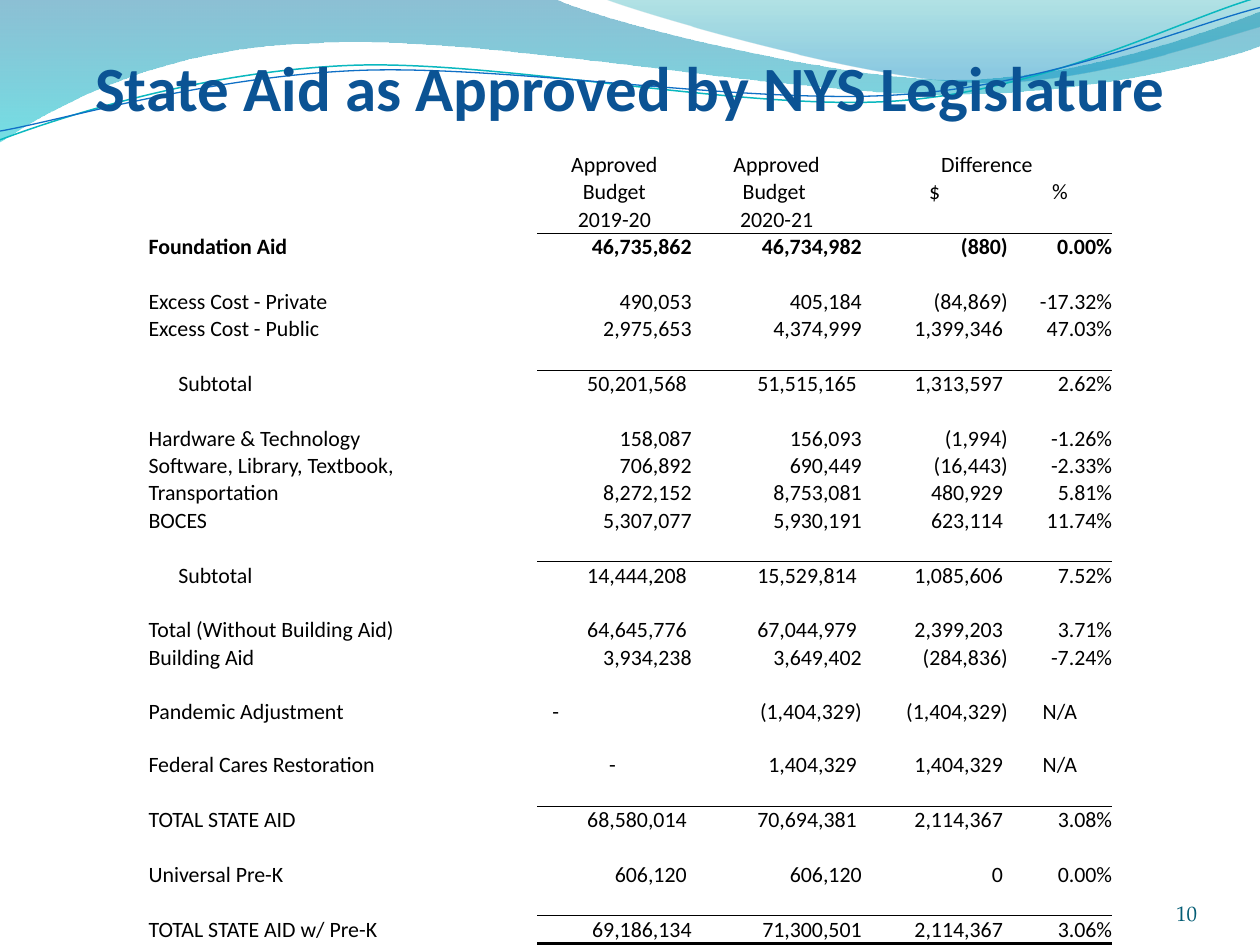
import math
from dataclasses import dataclass

import pptx
import pptx.dml.color
import pptx.enum.text
import pptx.oxml
import pptx.oxml.ns
import pptx.util

Pt = pptx.util.Pt
ALIGN = pptx.enum.text.PP_ALIGN
BOTTOM = pptx.enum.text.MSO_ANCHOR.BOTTOM
qn = pptx.oxml.ns.qn
DRAWING = "http://schemas.openxmlformats.org/drawingml/2006/main"
NO_STYLE = "{2D5ABB26-0587-4C30-8999-92F81FD0307C}"


@dataclass(frozen=True)
class Theme:
    body_font: str = "Calibri"
    number_font: str = "TeX Gyre Pagella"
    title_size: float = 36
    body_size: float = 12.5
    number_size: float = 12
    title: str = "0B5394"
    number: str = "045D75"
    ink: str = "000000"
    teal_line: str = "0AB8BF"
    blue_line: str = "0F6FC6"
    thin_rule: float = 0.5
    thick_rule: float = 2


THEME = Theme()


@dataclass(frozen=True)
class Stop:
    position: float
    color: str
    opacity: int


@dataclass(frozen=True)
class Wave:
    """Each segment holds two numbers for a line, six for a Bezier curve."""
    start: tuple
    segments: tuple
    stops: tuple = ()
    line: str = ""
    weight: float = 0
    tilt: float = 0
    center: tuple = (0, 0)


@dataclass(frozen=True)
class Row:
    cells: tuple = ("",) * 5
    height: float = 15.65
    header: bool = False
    bold: bool = False
    ruled: bool = False  # thin rule above the figures
    indent: float = 0
    dash_inset: float = 0  # right inset of a centred dash


WAVES = (
    Wave((0, 0),
         ((316.8, -0.7),
          (342.7, 12.2, 478.1, 45.4, 545.8, 45.4),
          (614.2, 45.4, 689.8, 18.7, 720, 6.5),
          (720.7, 25.9),
          (707.8, 31.7, 626.4, 54.7, 537.1, 54),
          (447.8, 54, 275, 20.2, 185, 24.5),
          (92.9, 25.9, 33.1, 59.8, -0.7, 81.4)),
         stops=(Stop(0, "0074A1", 45), Stop(1, "00C6CF", 55))),
    Wave((344.9, -0.7),
         ((366.5, 7.9, 491, 44.6, 553.7, 46.8),
          (616.3, 49.7, 691.9, 23, 720, 15.1),
          (720, 0)),
         stops=(Stop(0, "00A1A9", 30), Stop(0.8, "008BBF", 45))),
    Wave((0, 79.9),
         ((34.6, 67, 113.8, 41, 199.4, 37.4),
          (284.4, 33.8, 427, 64.1, 513.4, 57.6),
          (599.8, 51.1, 675.4, 10.8, 718.6, -1.4)),
         line=THEME.teal_line, weight=0.85, tilt=-2.7, center=(359.3, 41.4)),
    Wave((0, 74.9),
         ((33.8, 69.1, 118.1, 43.9, 203.8, 40.3),
          (290.2, 36.7, 429.8, 60.5, 516.2, 54),
          (601.9, 48.2, 677.5, 15.1, 720, 4.3)),
         line=THEME.blue_line, weight=0.75, tilt=-2.7, center=(359.6, 42.5)),
)

COLUMN_WIDTHS = (222, 88.3, 97.2, 83.5, 59.6)
BLANK = Row()
AID_ROWS = (
    Row(("", "Approved", "Approved", "Difference", ""), header=True),
    Row(("", "Budget", "Budget ", "$", "%"), header=True),
    Row(("", "2019-20", "2020-21", "", ""), header=True),
    Row(("Foundation Aid", "46,735,862", "46,734,982", "(880)", "0.00%"), bold=True, ruled=True),
    BLANK,
    Row(("Excess Cost - Private", "490,053", "405,184", "(84,869)", "-17.32%")),
    Row(("Excess Cost - Public", "2,975,653", "4,374,999", "1,399,346 ", "47.03%")),
    BLANK,
    Row(("Subtotal", "50,201,568 ", "51,515,165 ", "1,313,597 ", "2.62%"), ruled=True, indent=17),
    BLANK,
    Row(("Hardware & Technology", "158,087", "156,093", "(1,994)", "-1.26%")),
    Row(("Software, Library, Textbook,", "706,892", "690,449", "(16,443)", "-2.33%")),
    Row(("Transportation", "8,272,152", "8,753,081", "480,929 ", "5.81%")),
    Row(("BOCES", "5,307,077", "5,930,191", "623,114 ", "11.74%")),
    BLANK,
    Row(("Subtotal", "14,444,208 ", "15,529,814 ", "1,085,606 ", "7.52%"), ruled=True, indent=17),
    BLANK,
    Row(("Total (Without Building Aid)", "64,645,776 ", "67,044,979 ", "2,399,203 ", "3.71%")),
    Row(("Building Aid", "3,934,238", "3,649,402", "(284,836)", "-7.24%")),
    Row(("Pandemic Adjustment", "-", "(1,404,329)", "(1,404,329)", "N/A"),
        height=30.8, dash_inset=67),
    Row(("Federal Cares Restoration", "-", "1,404,329 ", "1,404,329 ", "N/A"),
        height=30.8, dash_inset=2),
    BLANK,
    Row(("TOTAL STATE AID", "68,580,014 ", "70,694,381 ", "2,114,367 ", "3.08%"), ruled=True),
    BLANK,
    Row(("Universal Pre-K", "606,120 ", "606,120", "0 ", "0.00%")),
    BLANK,
    Row(("TOTAL STATE AID w/ Pre-K", "69,186,134", "71,300,501", "2,114,367 ", "3.06%"), ruled=True),
)


def rgb(color: str):
    return pptx.dml.color.RGBColor.from_string(color)


def set_font(paragraph, name: str, size: float, color: str, bold: bool = False) -> None:
    font = paragraph.font
    font.name, font.size, font.bold = name, Pt(size), bold
    font.color.rgb = rgb(color)


def level_point(wave: Wave, x: float, y: float) -> tuple:
    """Undo the tilt, which the shape's rotation puts back."""
    angle = math.radians(-wave.tilt)
    dx, dy = x - wave.center[0], y - wave.center[1]
    return (Pt(wave.center[0] + dx * math.cos(angle) - dy * math.sin(angle)),
            Pt(wave.center[1] + dx * math.sin(angle) + dy * math.cos(angle)))


def bend_segments(shape, wave: Wave) -> None:
    """Turn each run of three control points into one Bezier curve."""
    lines = iter(list(shape._element.iter(qn("a:lnTo"))))
    for segment in wave.segments:
        first = next(lines)
        if len(segment) == 6:
            curve = first.makeelement(qn("a:cubicBezTo"), {})
            first.addprevious(curve)
            for line in (first, next(lines), next(lines)):
                curve.append(line[0])
                line.getparent().remove(line)


def draw_wave(slide, wave: Wave) -> None:
    pairs = [wave.start] + [s[i:i + 2] for s in wave.segments for i in range(0, len(s), 2)]
    points = [level_point(wave, *pair) for pair in pairs]
    builder = slide.shapes.build_freeform(*points[0], scale=1.0)
    builder.add_line_segments(points[1:], close=bool(wave.stops))
    shape = builder.convert_to_shape()
    bend_segments(shape, wave)
    shape.shadow.inherit = False
    shape.rotation = wave.tilt % 360
    if not wave.stops:
        shape.fill.background()
        shape.line.color.rgb = rgb(wave.line)
        shape.line.width = Pt(wave.weight)
        return
    shape.line.fill.background()
    shape.fill.gradient()
    shape.fill.gradient_angle = 270
    for target, stop in zip(shape.fill.gradient_stops, wave.stops):
        target.position = stop.position
        target.color.rgb = rgb(stop.color)
    for color, stop in zip(shape._element.spPr.iter(qn("a:srgbClr")), wave.stops):
        color.append(color.makeelement(qn("a:alpha"), {"val": str(stop.opacity * 1000)}))


def draw_text(slide, text: str, box: tuple, align, font: tuple) -> None:
    frame = slide.shapes.add_textbox(*map(Pt, box)).text_frame
    frame.word_wrap = True
    frame.vertical_anchor = BOTTOM
    frame.margin_left = frame.margin_right = frame.margin_top = frame.margin_bottom = 0
    paragraph = frame.paragraphs[0]
    paragraph.text, paragraph.alignment = text, align
    set_font(paragraph, *font)


def set_borders(cell, top: float, bottom: float) -> None:
    """Write all four sides; a weight of 0 means no line."""
    for side, weight in (("lnL", 0), ("lnR", 0), ("lnT", top), ("lnB", bottom)):
        paint = (f'<a:solidFill><a:srgbClr val="{THEME.ink}"/></a:solidFill>'
                 if weight else "<a:noFill/>")
        cell._tc.get_or_add_tcPr().append(pptx.oxml.parse_xml(
            f'<a:{side} xmlns:a="{DRAWING}" w="{Pt(weight)}">{paint}</a:{side}>'))


def fill_cell(cell, text: str, row: Row, column: int) -> None:
    cell.margin_left = cell.margin_right = cell.margin_top = cell.margin_bottom = 0
    cell.vertical_anchor = BOTTOM
    cell.fill.background()
    paragraph = cell.text_frame.paragraphs[0]
    if column == 0:
        paragraph.alignment = ALIGN.LEFT
        cell.margin_left = Pt(row.indent)
    else:
        centred = row.header or text in ("-", "N/A")
        paragraph.alignment = ALIGN.CENTER if centred else ALIGN.RIGHT
    if text == "-":
        cell.margin_right = Pt(row.dash_inset)
    if text:
        paragraph.text = text
    set_font(paragraph, THEME.body_font, THEME.body_size, THEME.ink, row.bold)
    if not text:
        size = str(int(THEME.body_size * 100))
        paragraph._p.append(paragraph._p.makeelement(qn("a:endParaRPr"), {"sz": size}))


def draw_aid_table(slide) -> None:
    frame = slide.shapes.add_table(len(AID_ROWS), len(COLUMN_WIDTHS), Pt(84.9), Pt(86.2),
                                   Pt(sum(COLUMN_WIDTHS)), Pt(sum(r.height for r in AID_ROWS)))
    table = frame.table
    table.first_row = table.horz_banding = False
    table._tbl.tblPr.find(qn("a:tableStyleId")).text = NO_STYLE
    for column, width in zip(table.columns, COLUMN_WIDTHS):
        column.width = Pt(width)
    for index, row in enumerate(AID_ROWS):
        table.rows[index].height = Pt(row.height)
        top = THEME.thin_rule if row.ruled else 0
        if index == len(AID_ROWS) - 1:
            bottom = THEME.thick_rule
        else:
            bottom = THEME.thin_rule if AID_ROWS[index + 1].ruled else 0
        for column, text in enumerate(row.cells):
            cell = table.cell(index, column)
            set_borders(cell, *((top, bottom) if column else (0, 0)))
            fill_cell(cell, text, row, column)
    table.cell(0, 3).merge(table.cell(0, 4))


def main() -> None:
    deck = pptx.Presentation()
    deck.slide_width, deck.slide_height = Pt(720), Pt(540)
    slide = deck.slides.add_slide(deck.slide_layouts[6])
    for wave in WAVES:
        draw_wave(slide, wave)
    draw_text(slide, "State Aid as Approved by NYS Legislature", (18, 24, 684, 46.8),
              ALIGN.CENTER, (THEME.body_font, THEME.title_size, THEME.title, True))
    draw_text(slide, "10", (624, 500.4, 60, 28.8), ALIGN.RIGHT,
              (THEME.number_font, THEME.number_size, THEME.number))
    draw_aid_table(slide)
    deck.save("out.pptx")


if __name__ == "__main__":
    main()
